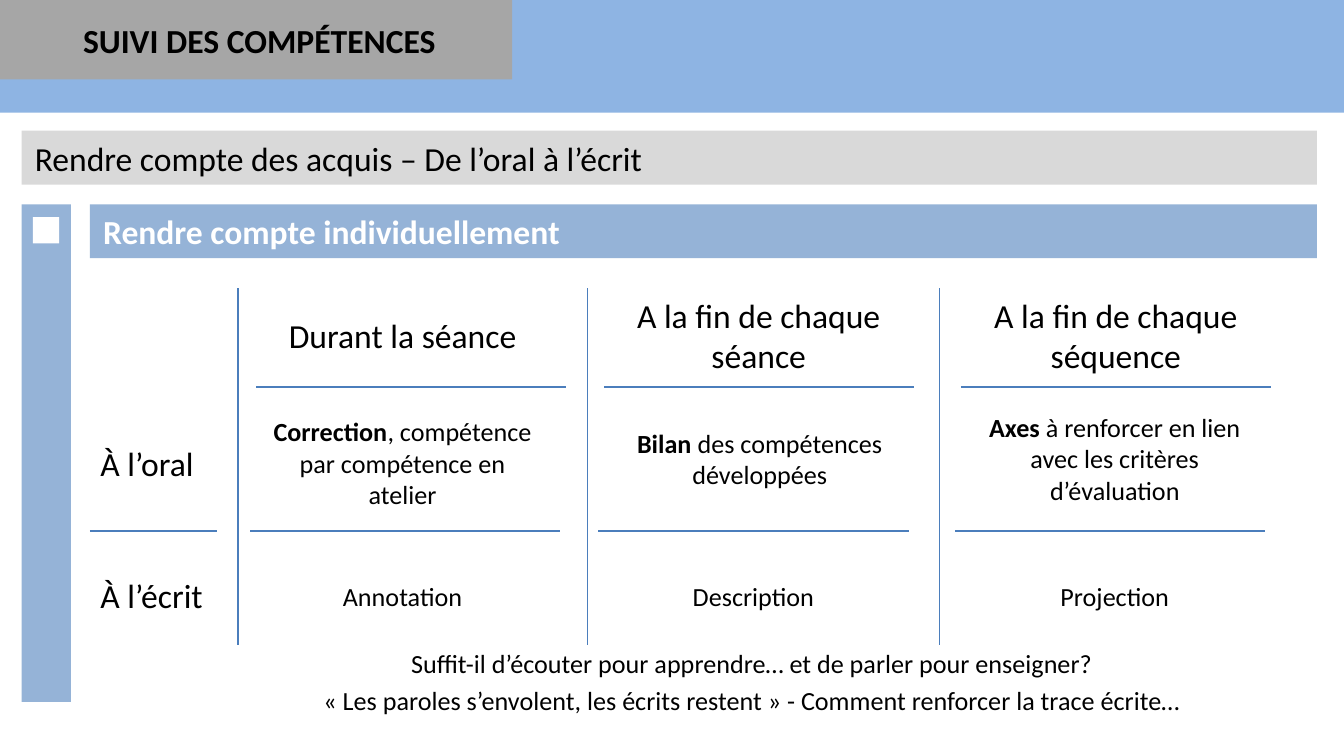
from dataclasses import dataclass

from lxml.etree import SubElement
from pptx import Presentation
from pptx.dml.color import RGBColor as Rgb
from pptx.enum.shapes import MSO_CONNECTOR as Link, MSO_SHAPE as Form
from pptx.enum.text import MSO_ANCHOR as Anchor, MSO_AUTO_SIZE as Fit, PP_ALIGN as Align
from pptx.oxml.ns import qn
from pptx.util import Cm, Pt


@dataclass(frozen=True)
class Theme:
    font: str = "Calibri"
    big: int = 18
    small: int = 14
    ink: str = "000000"
    white: str = "FFFFFF"
    sky: str = "8EB4E3"
    blue: str = "95B3D7"
    rule: str = "4B7EBC"
    gray: str = "A6A6A6"
    pale: str = "D9D9D9"
    thin: float = 0.75


class Deck:
    def __init__(self, theme, wide, high):
        self.theme = theme
        self.file = Presentation()
        self.file.slide_width, self.file.slide_height = Cm(wide), Cm(high)
        self.slide = self.file.slides.add_slide(self.file.slide_layouts[6])

    def label(self, shape, text, size, tint=None, bold=None, align=Align.LEFT, lead="", wrap=True):
        frame = shape.text_frame
        frame.word_wrap = wrap
        frame.auto_size = Fit.SHAPE_TO_FIT_TEXT
        frame.vertical_anchor = Anchor.MIDDLE
        para = frame.paragraphs[0]
        para.alignment = align
        if lead:
            run = para.add_run()
            run.text, run.font.bold = lead, True
        para.add_run().text = text
        font = para.font
        font.name, font.size, font.bold = self.theme.font, Pt(size), bold
        font.color.rgb = Rgb.from_string(tint or self.theme.ink)

    def rect(self, x, y, w, h, fill):
        shape = self.slide.shapes.add_shape(Form.RECTANGLE, Cm(x), Cm(y), Cm(w), Cm(h))
        shape.shadow.inherit = False
        shape.fill.solid()
        shape.fill.fore_color.rgb = Rgb.from_string(fill)
        shape.line.fill.background()
        return shape

    def text(self, x, mid, w, text, size, rows=1, **style):
        high = 0.25 + rows * size * 0.043
        box = self.slide.shapes.add_textbox(Cm(x), Cm(mid - high / 2), Cm(w), Cm(high))
        self.label(box, text, size, **style)

    def line(self, x, y, w=0, h=0):
        line = self.slide.shapes.add_connector(Link.STRAIGHT, Cm(x), Cm(y), Cm(x + w), Cm(y + h))
        line.line.color.rgb = Rgb.from_string(self.theme.rule)
        line.line.width = Pt(self.theme.thin)
        SubElement(line._element.spPr, qn("a:effectLst"))


def main():
    """Build the skills follow-up slide and save it."""
    look = Theme()
    deck = Deck(look, 25.4, 14.28)

    deck.rect(0, 0, 25.4, 2.13, look.sky)
    deck.rect(0, 0, 9.68, 1.5, look.gray)
    deck.text(1.32, 0.76, 7.24, "SUIVI DES COMPÉTENCES", look.big, bold=True, wrap=False)
    topic = deck.rect(0.41, 2.47, 24.48, 1.02, look.pale)
    deck.label(topic, "Rendre compte des acquis – De l’oral à l’écrit", look.big)
    deck.rect(0.41, 3.86, 0.93, 9.4, look.blue)
    deck.rect(0.62, 4.1, 0.5, 0.5, look.white)
    head = deck.rect(1.7, 3.86, 23.19, 1.02, look.blue)
    deck.label(head, "Rendre compte individuellement", look.big, tint=look.white, bold=True)

    cols = [
        (4.5, 4.84, 4.83, 4.88, 4.88, 8.74, "Durant la séance", 1,
         "Correction", ", compétence par compétence en atelier", 3, "Annotation"),
        (11.1, 11.42, 11.56, 11.63, 11.51, 8.66, "A la fin de chaque séance", 2,
         "Bilan", " des compétences développées", 2, "Description"),
        (17.75, 18.16, 18.31, 18.34, 18.34, 8.66, "A la fin de chaque séquence", 2,
         "Axes ", "à renforcer en lien avec les critères d’évaluation", 3, "Projection"),
    ]
    mid = Align.CENTER
    for edge, rule, top, oral, note, level, when, tall, lead, body, rows, trace in cols:
        deck.line(edge, 5.44, h=6.75)
        deck.line(rule, 7.31, w=5.86)
        deck.line(rule - 0.11, 10.03, w=5.86)
        deck.text(top, 6.33, 5.56, when, look.big, tall, align=mid)
        deck.text(oral, level, 5.46, body, look.small, rows, align=mid, lead=lead)
        deck.text(note, 11.26, 5.46, trace, look.small, align=mid)

    deck.line(1.7, 10.03, w=2.41)
    for level, mode in [(8.75, "À l’oral"), (11.24, "À l’écrit")]:
        deck.text(1.65, level, 2.74, mode, look.big)

    quotes = [
        "Suffit-il d’écouter pour apprendre… et de parler pour enseigner?",
        "« Les paroles s’envolent, les écrits restent » - Comment renforcer la trace écrite…",
    ]
    for i, quote in enumerate(quotes):
        deck.text(4.5, 12.53 + i * 0.7, 19.43, quote, look.small, align=mid)

    deck.file.save("out.pptx")


if __name__ == "__main__":
    main()
